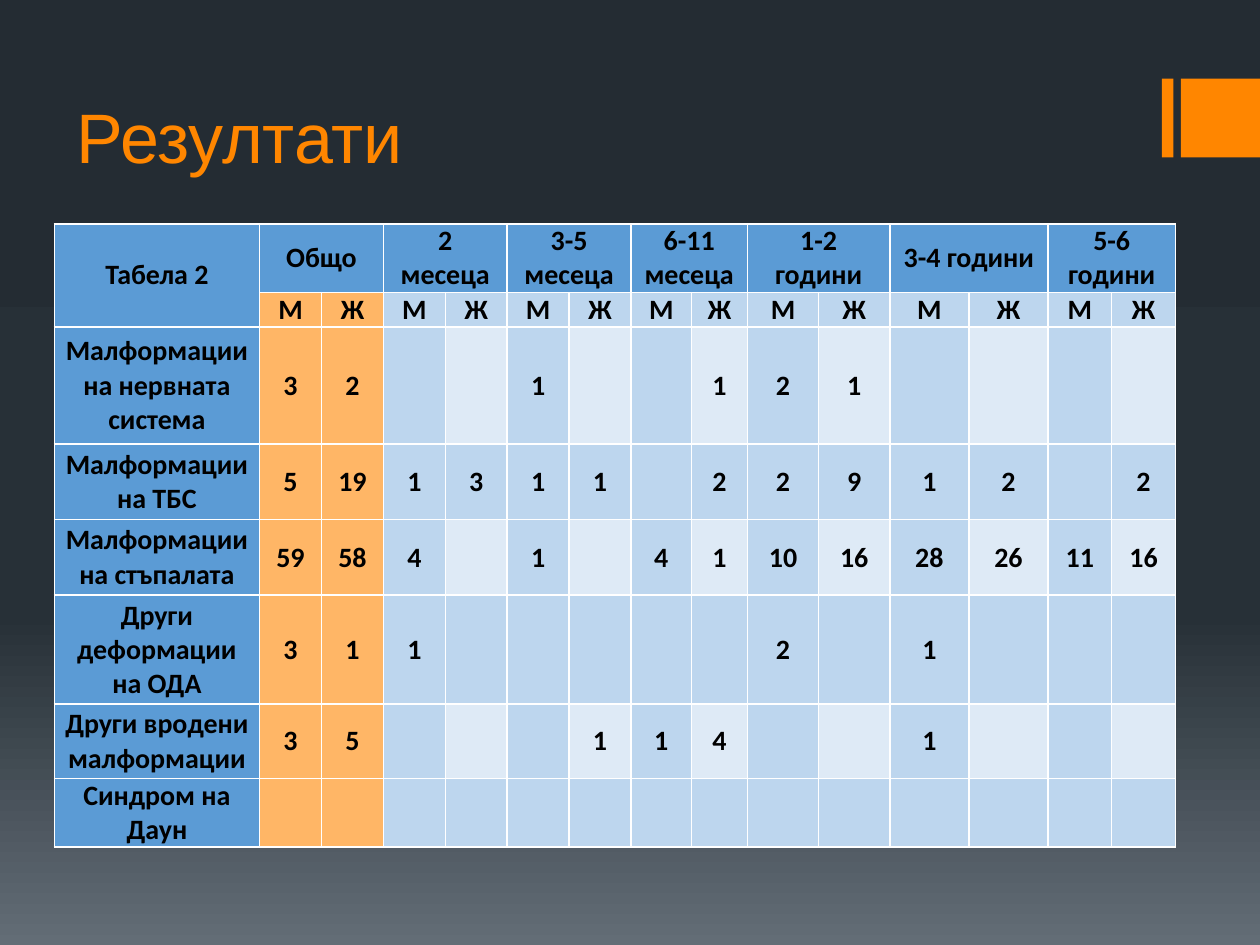
"""Builds the results slide with a table of malformations by age and sex."""
import copy
import pptx
import pptx.dml.color
import pptx.enum.shapes
import pptx.enum.text
import pptx.oxml
import pptx.oxml.ns
import pptx.util
from pptx.util import Pt

theme = {
    "backdrop": [(0, "242C33"), (0.65, "273037"), (1, "636D76")],
    "accent": "FF8600", "header": "5B9BD5", "total": "FFB666",
    "band": "BDD6EE", "pale": "DEEAF6", "text": "000000", "border": "FFFFFF",
    "title_font": "Arial", "title_size": 40,
    "table_font": "Calibri", "table_size": 16,
}


def color(value):
    return pptx.dml.color.RGBColor.from_string(value)


def write(paragraph, words, font, size, value, bold):
    run = paragraph.add_run()
    run.text = words
    run.font.name = font
    run.font.size = Pt(size)
    run.font.bold = bold
    run.font.color.rgb = color(value)


presentation = pptx.Presentation()
presentation.slide_width, presentation.slide_height = Pt(720), Pt(540)
slide = presentation.slides.add_slide(presentation.slide_layouts[5])

backdrop = slide.background.fill
backdrop.gradient()
backdrop.gradient_angle = 270
stop_list = slide.element.find(".//" + pptx.oxml.ns.qn("a:gsLst"))
stop_list.insert(1, copy.deepcopy(stop_list[0]))
for stop, (position, value) in zip(backdrop.gradient_stops, theme["backdrop"]):
    stop.position = position
    stop.color.rgb = color(value)

for left, width in [(664, 6.5), (674.75, 45.25)]:
    accent = slide.shapes.add_shape(
        pptx.enum.shapes.MSO_SHAPE.RECTANGLE, Pt(left), Pt(45), Pt(width), Pt(45))
    accent.shadow.inherit = False
    accent.fill.solid()
    accent.fill.fore_color.rgb = color(theme["accent"])
    accent.line.fill.background()

heading = slide.shapes.title
heading.left, heading.top, heading.width, heading.height = Pt(36.5), Pt(31.5), Pt(576), Pt(73.5)
heading.text_frame.vertical_anchor = pptx.enum.text.MSO_ANCHOR.BOTTOM
heading_line = heading.text_frame.paragraphs[0]
heading_line.alignment = pptx.enum.text.PP_ALIGN.LEFT
write(heading_line, "Резултати", theme["title_font"], theme["title_size"], theme["accent"], False)

ages = ["Общо", "2 месеца", "3-5 месеца", "6-11 месеца", "1-2 години", "3-4 години", "5-6 години"]
findings = [
    ("Малформации на нервната система", [3, 2, "", "", 1, "", "", 1, 2, 1, "", "", "", ""]),
    ("Малформации на ТБС", [5, 19, 1, 3, 1, 1, "", 2, 2, 9, 1, 2, "", 2]),
    ("Малформации на стъпалата", [59, 58, 4, "", 1, "", 4, 1, 10, 16, 28, 26, 11, 16]),
    ("Други деформации на ОДА", [3, 1, 1, "", "", "", "", "", 2, "", 1, "", "", ""]),
    ("Други вродени малформации", [3, 5, "", "", "", 1, 1, 4, "", "", 1, "", "", ""]),
    ("Синдром на Даун", [""] * 14),
]
rows = [["Табела 2"] + [words for age in ages for words in (age, "")],
        [""] + ["М", "Ж"] * len(ages)]
rows += [[finding] + counts for finding, counts in findings]
column_widths = [117.3] + [35.4] * 6 + [34.6, 32, 40.7, 40.7, 45.2, 45.2, 36.4, 36.4]
row_heights = [30.2, 14.4, 67, 43.2, 43.2, 62.3, 42.5, 28.8]

results = slide.shapes.add_table(
    len(rows), len(column_widths), Pt(31), Pt(128), Pt(sum(column_widths)), Pt(sum(row_heights))).table
results.first_row = results.horz_banding = False
for column, width in zip(results.columns, column_widths):
    column.width = Pt(width)
for row, height in zip(results.rows, row_heights):
    row.height = Pt(height)

for r, row in enumerate(rows):
    for c, words in enumerate(row):
        cell = results.cell(r, c)
        if r == 0 or c == 0:
            fill = "header"
        elif c < 3:
            fill = "total"
        elif r > 1 and r % 2 == 0 and c % 2 == 0:
            fill = "pale"
        else:
            fill = "band"
        if r == 5 and c > 2:
            fill = "band"
        cell.fill.solid()
        cell.fill.fore_color.rgb = color(theme[fill])
        cell.vertical_anchor = pptx.enum.text.MSO_ANCHOR.MIDDLE
        cell.margin_left = cell.margin_right = Pt(4.3)
        cell.margin_top = cell.margin_bottom = Pt(0)
        cell_line = cell.text_frame.paragraphs[0]
        cell_line.alignment = pptx.enum.text.PP_ALIGN.CENTER
        cell_line.font.size = Pt(theme["table_size"])
        if words != "":
            write(cell_line, str(words), theme["table_font"], theme["table_size"], theme["text"], True)
        properties = cell._tc.get_or_add_tcPr()
        for order, side in enumerate(["lnL", "lnR", "lnT", "lnB"]):
            properties.insert(order, pptx.oxml.parse_xml(
                f'<a:{side} {pptx.oxml.ns.nsdecls("a")} w="12700"><a:solidFill>'
                f'<a:srgbClr val="{theme["border"]}"/></a:solidFill></a:{side}>'))

results.cell(0, 0).merge(results.cell(1, 0))
for c in range(1, len(column_widths), 2):
    results.cell(0, c).merge(results.cell(0, c + 1))

presentation.save("out.pptx")
